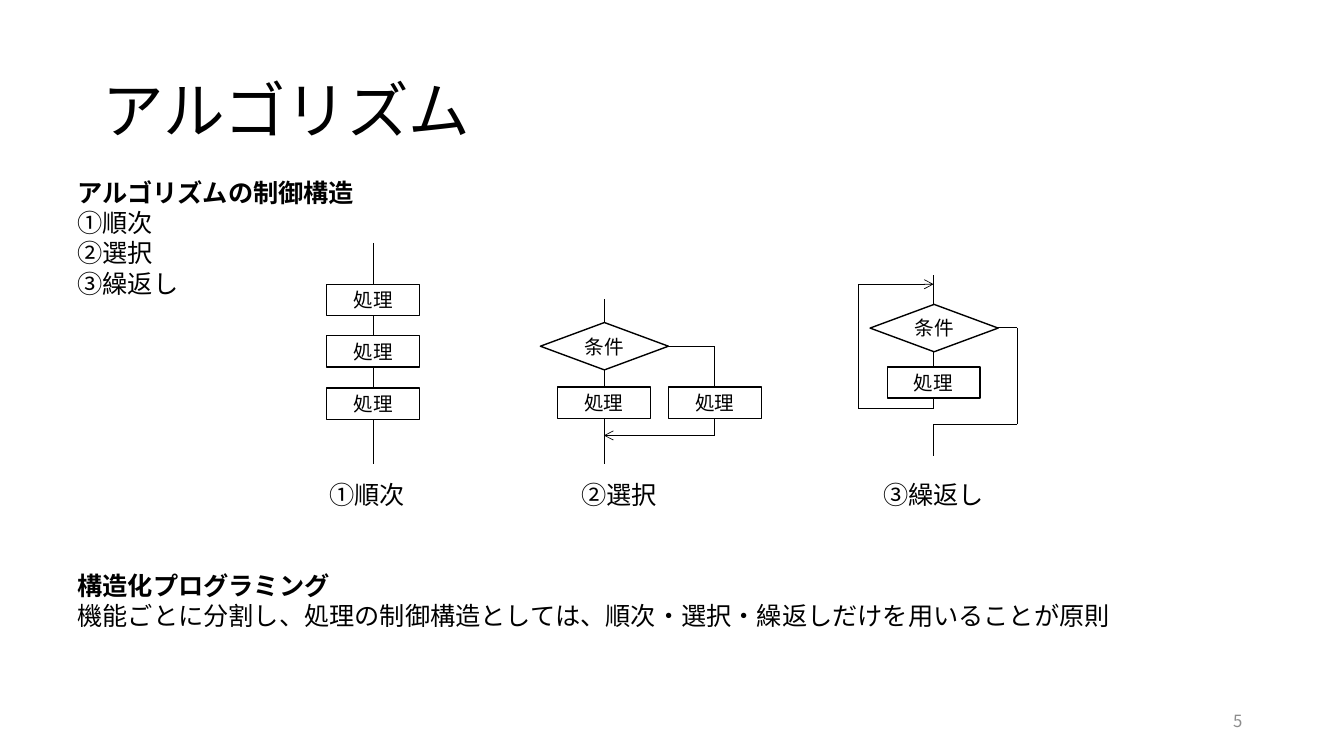
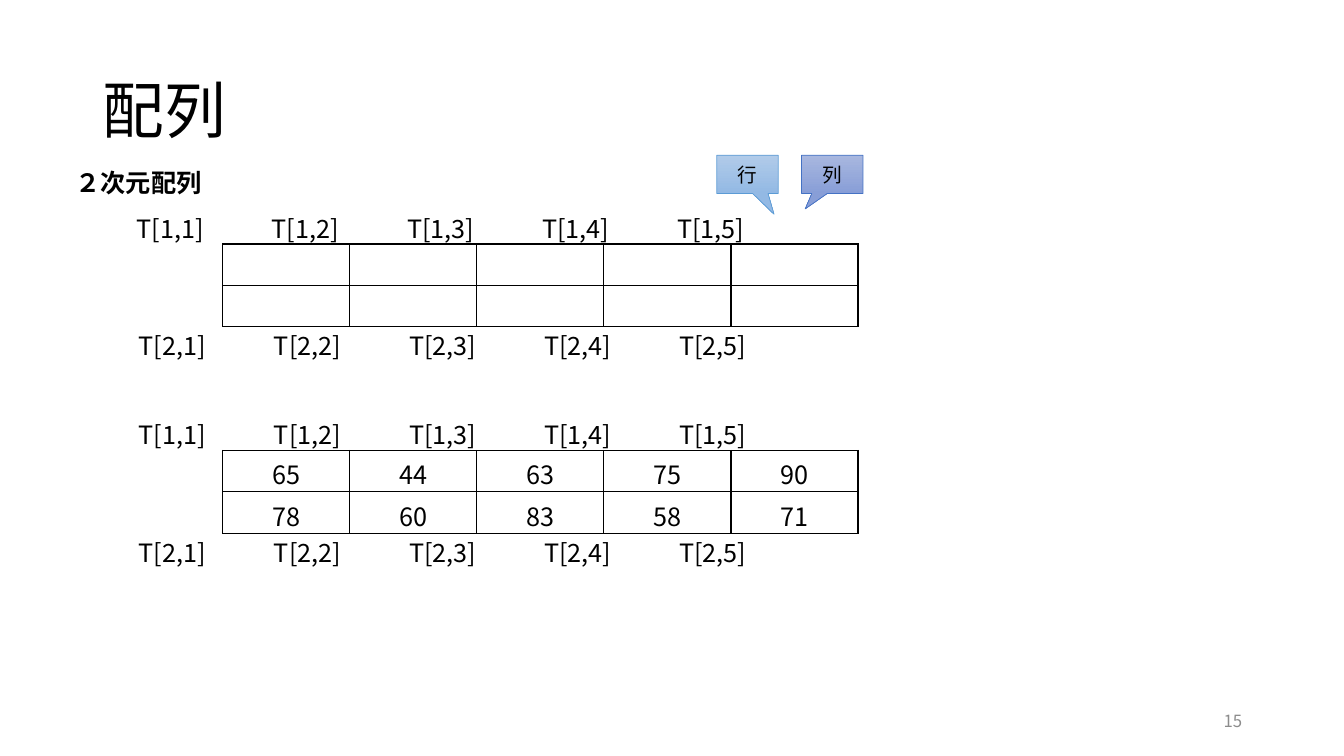
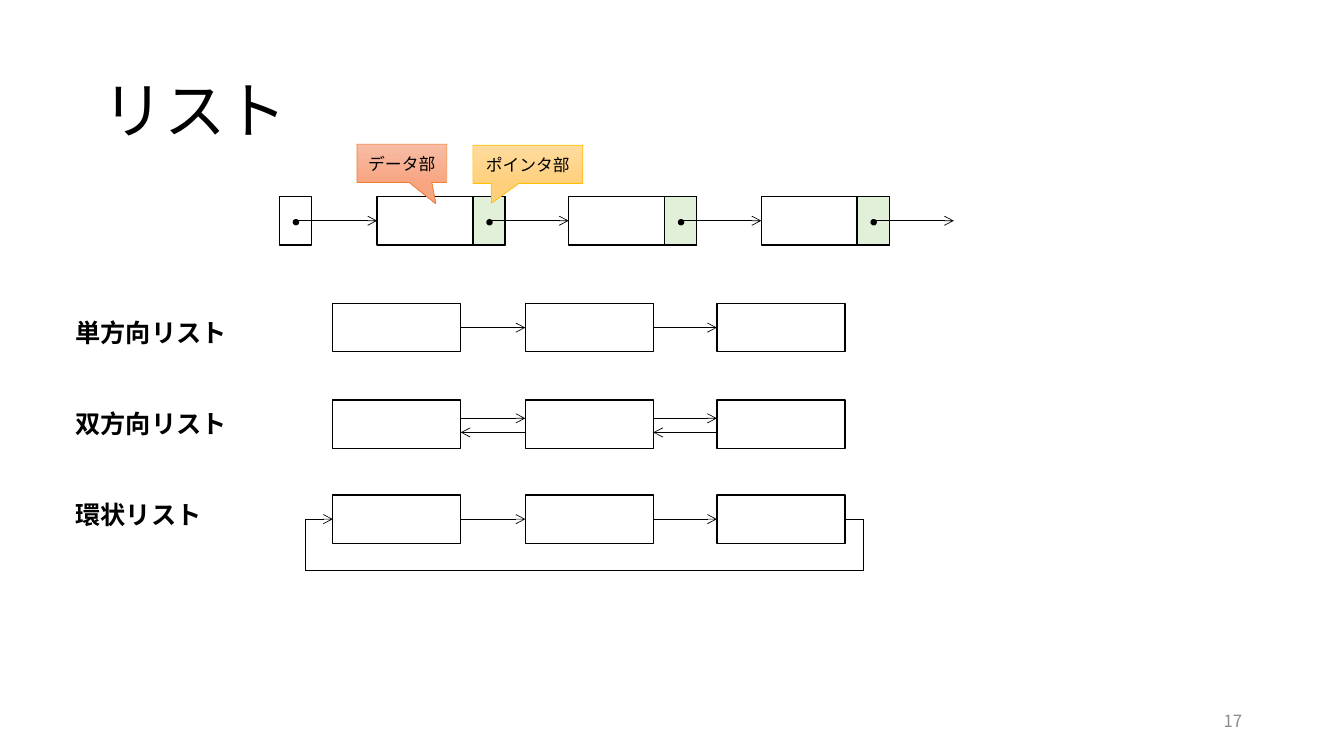
"""Build three lecture slides on algorithms, arrays and linked lists."""
from dataclasses import dataclass

from lxml import etree
from pptx import Presentation
from pptx import util as u
from pptx.dml.color import RGBColor
from pptx.enum import shapes, text
from pptx.oxml.ns import qn


@dataclass(frozen=True)
class Theme:
    font: str = "Noto Sans CJK JP"
    body_font: str = "Arial"
    ink: str = "000000"
    paper: str = "FFFFFF"
    muted: str = "8C8C8C"
    pointer: str = "E2F0D9"
    title: int = 44
    body: int = 18
    label: int = 14
    small: int = 12
    thin: float = 0.5
    border: float = 1


THEME = Theme()
PX = 9144
KIND = shapes.MSO_SHAPE
ALIGN = text.PP_ALIGN

TITLE_AREA = (92, 40, 1150, 145)
NUMBER_AREA = (942, 695, 300, 40)

ALGORITHM = {
    "title": "アルゴリズム",
    "number": "5",
    "texts": [
        ((67, 171, 1199, 140), "アルゴリズムの制御構造", ["①順次", "②選択", "③繰返し"]),
        ((67, 561, 1199, 80), "構造化プログラミング",
         ["機能ごとに分割し、処理の制御構造としては、順次・選択・繰返しだけを用いることが原則"]),
    ],
    "captions": [("①順次", 364), ("②選択", 614), ("③繰返し", 926)],
    "caption_top": 471,
    "routes": [
        [(370, 241), (370, 460)],
        [(599, 297), (599, 460)],
        [(663, 344), (709, 344), (709, 432)],
        [(926, 273), (926, 405), (851, 405), (851, 282)],
        [(990, 325), (1009, 325), (1009, 421), (926, 421), (926, 452)],
    ],
    "arrows": [[(709, 432), (599, 432)], [(851, 282), (926, 282)]],
    "processes": [(324, 282), (324, 333), (324, 385), (553, 384), (663, 384), (880, 364)],
    "decisions": [(536, 320), (863, 302)],
}
PROCESS_SIZE = (92, 31)
DECISION_SIZE = (127, 47)

ARRAY = {
    "title": "配列",
    "number": "15",
    "heading": ("２次元配列", 161),
    "index_rows": [(1, 126, 207), (2, 128, 323), (1, 128, 411), (2, 128, 528)],
    "tables": [
        (242, [[""] * 5, [""] * 5]),
        (447, [["65", "44", "63", "75", "90"], ["78", "60", "83", "58", "71"]]),
    ],
    "callouts": [
        ("列", (795, 154, 61, 38), (-0.44, 0.9), ("A8B7DF", "889ED7"), "4472C4", THEME.label),
        ("行", (711, 154, 61, 38), (0.43, 1.04), ("B1CBE9", "93B9E4"), "5B9BD5", THEME.label),
    ],
}
TABLE_LEFT, CELL_WIDTH, CELL_HEIGHT = 221, 126, 41
INDEX_PITCH, INDEX_CENTER, INDEX_WIDTH = 134, 43, 110

LINKED = {
    "title": "リスト",
    "number": "17",
    "headings": [("単方向リスト", 310), ("双方向リスト", 400), ("環状リスト", 490)],
    "chain_lefts": [374, 564, 755],
    "chain_end": 946,
    "head_left": 277,
    "chain_top": 195,
    "row_lefts": [330, 521, 711],
    "rows": [(301, [(24, False)]), (397, [(18, False), (32, True)]), (491, [(24, False)])],
    "loop": [(838, 515), (856, 515), (856, 566), (303, 566), (303, 515), (330, 515)],
    "callouts": [
        ("ポインタ部", (469, 144, 109, 38), (-0.33, 1.01), ("FFDB9E", "FFD07C"), "FFC000", THEME.small),
        ("データ部", (354, 143, 89, 38), (0.38, 1.06), ("F7BDA5", "F8A582"), "ED7D31", THEME.small),
    ],
}
NODE_WIDTH, NODE_HEIGHT, POINTER_WIDTH, DOT = 127, 48, 32, 5


def emu(lengths):
    return [u.Emu(length * PX) for length in lengths]


def rgb(code):
    return RGBColor.from_string(code)


def write(frame, lines, size, align=ALIGN.LEFT, font=THEME.font, color=THEME.ink):
    for index, (words, bold) in enumerate(lines):
        para = frame.paragraphs[0] if index == 0 else frame.add_paragraph()
        para.alignment = align
        span = para.add_run()
        span.text = words
        span.font.name, span.font.size, span.font.bold = font, u.Pt(size), bold
        span.font.color.rgb = rgb(color)
        etree.SubElement(span.font._element, qn("a:ea"), typeface=font)


def add_text(page, area, lines, size=THEME.body, middle=False, **style):
    frame = page.shapes.add_textbox(*emu(area)).text_frame
    frame.word_wrap = True
    if middle:
        frame.vertical_anchor = text.MSO_ANCHOR.MIDDLE
    write(frame, lines, size, **style)
    return frame


def add_box(page, area, words="", kind=KIND.RECTANGLE, fill=THEME.paper, line=THEME.ink,
            width=THEME.border, size=THEME.label):
    box = page.shapes.add_shape(kind, *emu(area))
    box.shadow.inherit = False
    box.line.color.rgb = rgb(line)
    box.line.width = u.Pt(width)
    box.fill.solid()
    box.fill.fore_color.rgb = rgb(fill)
    if words:
        box.text_frame.word_wrap = False
        box.text_frame.vertical_anchor = text.MSO_ANCHOR.MIDDLE
        write(box.text_frame, [(words, False)], size, ALIGN.CENTER)
    return box


def add_callout(page, words, area, tip, shades, line, size):
    box = add_box(page, area, words, KIND.RECTANGULAR_CALLOUT, line=line,
                  width=THEME.thin, size=size)
    box.adjustments[0], box.adjustments[1] = tip
    box.fill.gradient()
    box.fill.gradient_angle = 270
    for stop, shade in zip(box.fill.gradient_stops, shades):
        stop.color.rgb = rgb(shade)


def add_route(page, points, arrow=False):
    for start, end in zip(points, points[1:]):
        line = page.shapes.add_connector(shapes.MSO_CONNECTOR.STRAIGHT, *emu(start + end))
        line.line.color.rgb = rgb(THEME.ink)
        line.line.width = u.Pt(THEME.thin)
        etree.SubElement(line._element.spPr, qn("a:effectLst"))
    if arrow:
        etree.SubElement(line.line._get_or_add_ln(), qn("a:tailEnd"), type="arrow")


def add_grid(page, top, rows):
    area = (TABLE_LEFT, top, CELL_WIDTH * len(rows[0]), CELL_HEIGHT * len(rows))
    table = page.shapes.add_table(len(rows), len(rows[0]), *emu(area)).table
    table.first_row = table.horz_banding = False
    for row, values in enumerate(rows):
        for column, value in enumerate(values):
            cell = table.cell(row, column)
            cell.fill.background()
            if value:
                write(cell.text_frame, [(value, False)], THEME.body, ALIGN.CENTER)
            props = cell._tc.get_or_add_tcPr()
            for index, side in enumerate(("lnL", "lnR", "lnT", "lnB")):
                edge = etree.Element(qn(f"a:{side}"), w=str(u.Pt(THEME.border)))
                paint = etree.SubElement(edge, qn("a:solidFill"))
                etree.SubElement(paint, qn("a:srgbClr"), val=THEME.ink)
                props.insert(index, edge)


def add_page(deck, content):
    page = deck.slides.add_slide(deck.slide_layouts[6])
    title = add_text(page, TITLE_AREA, [(content["title"], False)], THEME.title, middle=True)
    title.paragraphs[0].line_spacing = 0.9
    add_text(page, NUMBER_AREA, [(content["number"], False)], THEME.small, middle=True,
             align=ALIGN.RIGHT, color=THEME.muted)
    return page


def add_heading(page, words, top):
    add_text(page, (65, top, 240, 40), [(words, True)])


def build_algorithm(deck):
    page = add_page(deck, ALGORITHM)
    for area, heading, lines in ALGORITHM["texts"]:
        add_text(page, area, [(heading, True)] + [(line, False) for line in lines],
                 font=THEME.body_font)
    for words, center in ALGORITHM["captions"]:
        add_text(page, (center - 70, ALGORITHM["caption_top"], 140, 40), [(words, False)],
                 align=ALIGN.CENTER, font=THEME.body_font)
    for points in ALGORITHM["routes"]:
        add_route(page, points)
    for points in ALGORITHM["arrows"]:
        add_route(page, points, arrow=True)
    for corner in ALGORITHM["processes"]:
        add_box(page, corner + PROCESS_SIZE, "処理")
    for corner in ALGORITHM["decisions"]:
        add_box(page, corner + DECISION_SIZE, "条件", KIND.FLOWCHART_DECISION)


def build_array(deck):
    page = add_page(deck, ARRAY)
    add_heading(page, *ARRAY["heading"])
    for top, rows in ARRAY["tables"]:
        add_grid(page, top, rows)
    for row, left, top in ARRAY["index_rows"]:
        for column in range(5):
            center = left + INDEX_CENTER + column * INDEX_PITCH
            add_text(page, (center - INDEX_WIDTH // 2, top, INDEX_WIDTH, 40),
                     [(f"T[{row},{column + 1}]", False)], align=ALIGN.CENTER)
    for callout in ARRAY["callouts"]:
        add_callout(page, *callout)


def build_chain(page):
    lefts, top = LINKED["chain_lefts"], LINKED["chain_top"]
    head = LINKED["head_left"]
    pointers = [left + NODE_WIDTH - POINTER_WIDTH for left in lefts]
    for left in lefts:
        add_box(page, (left, top, NODE_WIDTH, NODE_HEIGHT))
    add_box(page, (head, top, POINTER_WIDTH, NODE_HEIGHT))
    for left in pointers:
        add_box(page, (left, top, POINTER_WIDTH, NODE_HEIGHT), fill=THEME.pointer)
    for callout in LINKED["callouts"]:
        add_callout(page, *callout)
    middle = top + NODE_HEIGHT // 2
    for left, target in zip([head] + pointers, lefts + [LINKED["chain_end"]]):
        add_route(page, [(left + POINTER_WIDTH // 2, middle), (target, middle)], arrow=True)
        add_box(page, (left + 14, middle - 1, DOT, DOT), kind=KIND.OVAL, fill=THEME.ink)


def build_linked(deck):
    page = add_page(deck, LINKED)
    for words, top in LINKED["headings"]:
        add_heading(page, words, top)
    build_chain(page)
    lefts = LINKED["row_lefts"]
    for top, links in LINKED["rows"]:
        for left in lefts:
            add_box(page, (left, top, NODE_WIDTH, NODE_HEIGHT))
        for left, target in zip(lefts, lefts[1:]):
            for drop, backward in links:
                points = [(left + NODE_WIDTH, top + drop), (target, top + drop)]
                add_route(page, points[::-1] if backward else points, arrow=True)
    add_route(page, LINKED["loop"], arrow=True)


def main():
    deck = Presentation()
    deck.slide_width, deck.slide_height = u.Inches(13.33), u.Inches(7.5)
    for build in (build_algorithm, build_array, build_linked):
        build(deck)
    deck.save("out.pptx")


if __name__ == "__main__":
    main()
